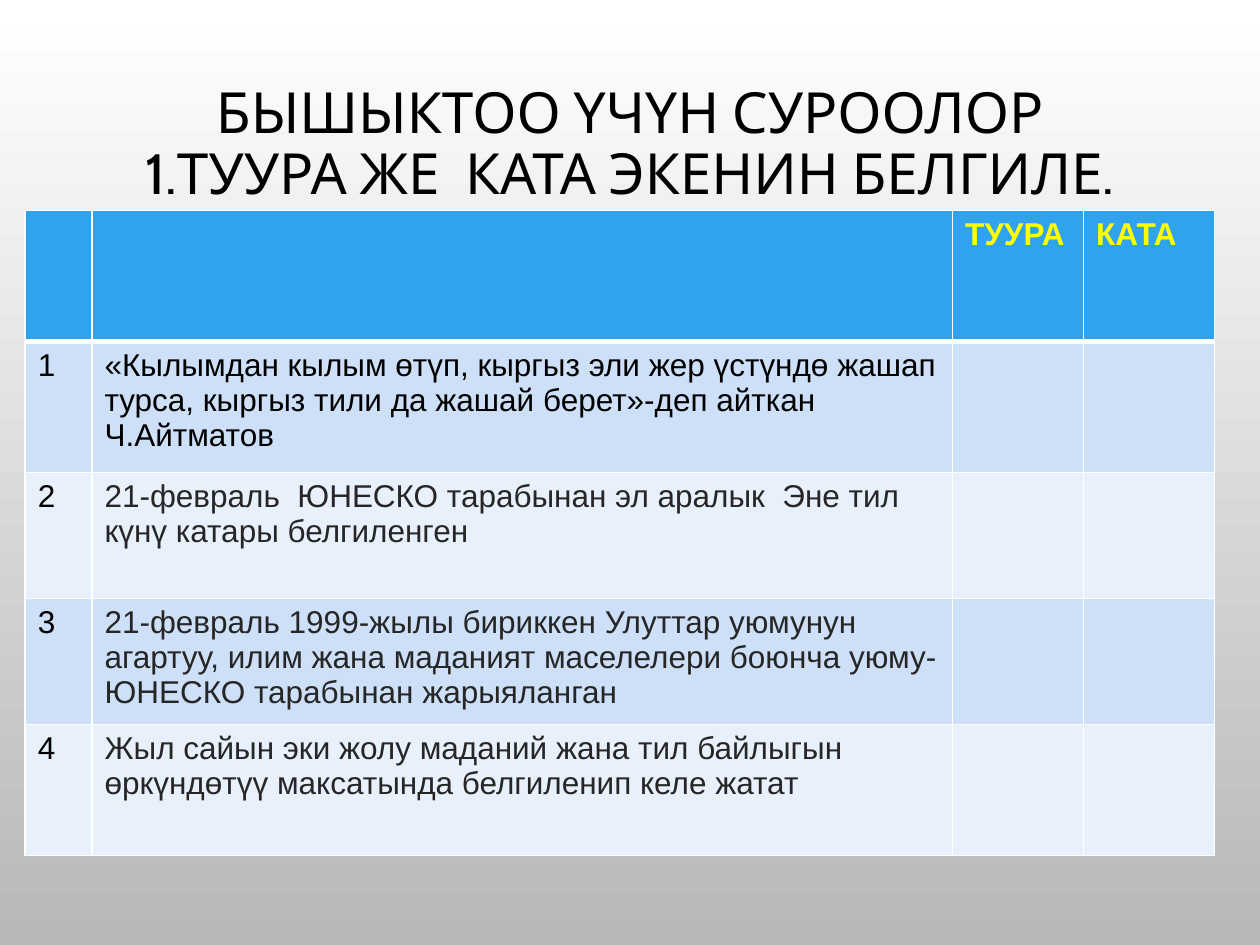
from dataclasses import dataclass

from pptx import Presentation
from pptx.dml.color import RGBColor
from pptx.enum.text import MSO_ANCHOR as Anchor, PP_ALIGN as Align
from pptx.oxml import parse_xml
from pptx.oxml.ns import nsdecls
from pptx.slide import Slide
from pptx.table import _Cell as Cell
from pptx.text.text import _Paragraph as Paragraph
from pptx.util import Inches, Pt

BLACK, GRAPHITE, WHITE, YELLOW = "000000", "262626", "FFFFFF", "FFFF00"
HEADER_BLUE, BANDS = "2FA3EE", ("CDE0F8", "E8F0FC")
COLUMN_WIDTHS = (0.53, 6.83, 1.04, 1.04)
ROW_HEIGHTS = (1.04, 1.04, 1, 1, 1.04)
TITLE_LINES = ("БЫШЫКТОО ҮЧҮН СУРООЛОР", "1.ТУУРА ЖЕ  КАТА ЭКЕНИН БЕЛГИЛЕ.")
HEADINGS = ("", "", "ТУУРА", "КАТА")


@dataclass(frozen=True)
class Statement:
    text: str
    color: str = GRAPHITE


STATEMENTS = (
    Statement("«Кылымдан кылым өтүп, кыргыз эли жер үстүндө жашап турса, "
              "кыргыз тили да жашай берет»-деп айткан Ч.Айтматов", BLACK),
    Statement("21-февраль  ЮНЕСКО тарабынан эл аралык  Эне тил күнү катары белгиленген"),
    Statement("21-февраль 1999-жылы бириккен Улуттар уюмунун агартуу, илим жана "
              "маданият маселелери боюнча уюму-ЮНЕСКО тарабынан жарыяланган"),
    Statement("Жыл сайын эки жолу маданий жана тил байлыгын өркүндөтүү "
              "максатында белгиленип келе жатат"),
)


def rgb(value: str) -> RGBColor:
    return RGBColor.from_string(value)


def add_run(paragraph: Paragraph, text: str, font: str, size: float,
            color: str, bold: bool = False) -> None:
    run = paragraph.add_run()
    run.text = text
    run.font.name = font
    run.font.size = Pt(size)
    run.font.bold = bold
    run.font.color.rgb = rgb(color)


def paint_background(slide: Slide) -> None:
    fill = slide.background.fill
    fill.gradient()
    fill.gradient_angle = 270
    for stop, position, color in zip(fill.gradient_stops, (0, 1), (WHITE, "B8B8B8")):
        stop.position = position
        stop.color.rgb = rgb(color)


def add_title(slide: Slide) -> None:
    title = slide.shapes.add_textbox(Inches(0.75), Inches(0.68), Inches(8.5), Inches(0.95))
    frame = title.text_frame
    frame.word_wrap = True
    frame.vertical_anchor = Anchor.MIDDLE
    paragraph = frame.paragraphs[0]
    paragraph.alignment = Align.CENTER
    paragraph.line_spacing = 0.9
    for index, line in enumerate(TITLE_LINES):
        if index:
            paragraph.add_line_break()
        add_run(paragraph, line, "Cabin", 32.4, BLACK)


def style_cell(cell: Cell, fill: str, top: float, bottom: float) -> None:
    properties = cell._tc.get_or_add_tcPr()
    for side, width in (("L", 1), ("R", 1), ("T", top), ("B", bottom)):
        properties.append(parse_xml(
            f'<a:ln{side} {nsdecls("a")} w="{Pt(width)}"><a:solidFill>'
            f'<a:srgbClr val="{WHITE}"/></a:solidFill></a:ln{side}>'))
    cell.fill.solid()
    cell.fill.fore_color.rgb = rgb(fill)


def add_quiz(slide: Slide) -> None:
    quiz = slide.shapes.add_table(
        len(ROW_HEIGHTS), len(COLUMN_WIDTHS), Inches(0.2), Inches(1.67),
        Inches(sum(COLUMN_WIDTHS)), Inches(sum(ROW_HEIGHTS))).table
    for column, width in zip(quiz.columns, COLUMN_WIDTHS):
        column.width = Inches(width)
    for index, (row, height) in enumerate(zip(quiz.rows, ROW_HEIGHTS)):
        row.height = Inches(height)
        fill = BANDS[(index - 1) % 2] if index else HEADER_BLUE
        for cell in row.cells:
            style_cell(cell, fill, top=3 if index == 1 else 1, bottom=1 if index else 3)

    def write(row: int, column: int, text: str, color: str, bold: bool = False) -> None:
        paragraph = quiz.cell(row, column).text_frame.paragraphs[0]
        add_run(paragraph, text, "Arial", 18, color, bold)

    for column, heading in enumerate(HEADINGS):
        if heading:
            write(0, column, heading, YELLOW, bold=True)
    for number, statement in enumerate(STATEMENTS, 1):
        write(number, 0, str(number), BLACK)
        write(number, 1, statement.text, statement.color)


def main() -> None:
    deck = Presentation()
    deck.slide_width, deck.slide_height = Inches(10), Inches(7.5)
    slide = deck.slides.add_slide(deck.slide_layouts[6])
    paint_background(slide)
    add_title(slide)
    add_quiz(slide)
    deck.save("out.pptx")


if __name__ == "__main__":
    main()
